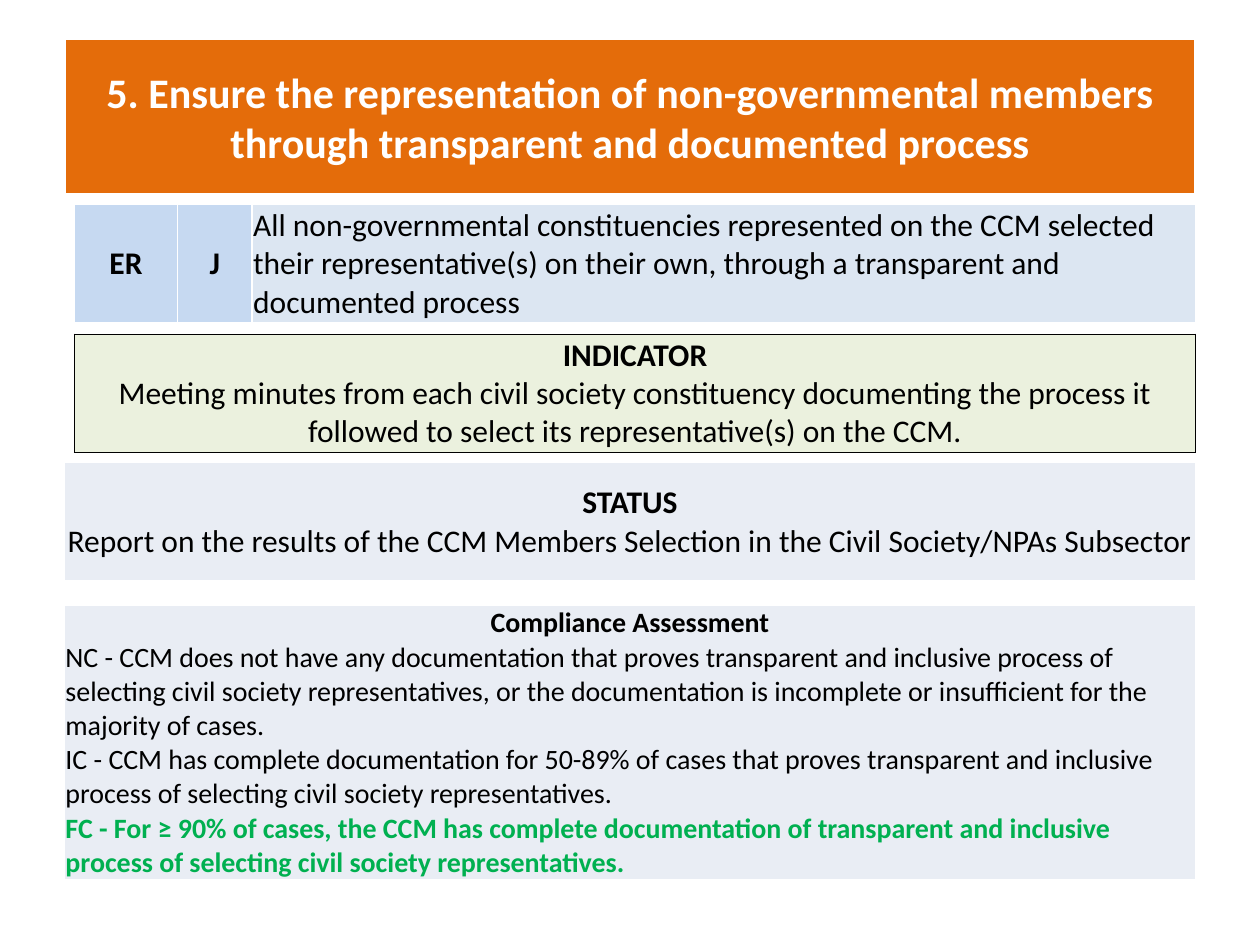
import pptx
import pptx.util
from lxml import etree
from pptx.dml.color import RGBColor
from pptx.enum.shapes import MSO_SHAPE
from pptx.enum.text import MSO_ANCHOR, PP_ALIGN
from pptx.oxml.ns import qn

FONT = "Calibri"
BLACK, WHITE, GREEN = "000000", "FFFFFF", "00B050"
ORANGE, BLUE, PALE_BLUE, OLIVE, GREY = "E46C0A", "C6D9F1", "DCE6F2", "EBF1DE", "E9EDF4"
CENTER, LEFT = PP_ALIGN.CENTER, PP_ALIGN.LEFT

TITLE = ("5. Ensure the representation of non-governmental members "
         "through transparent and documented process")

# Paragraph: text, bold, alignment, colour
REQUIREMENT = [
    (BLUE, [("ER", True, CENTER, BLACK)]),
    (BLUE, [("J", True, CENTER, BLACK)]),
    (PALE_BLUE, [("All non-governmental constituencies represented on the CCM selected their "
                  "representative(s) on their own, through a transparent and documented process",
                  False, LEFT, BLACK)]),
]
INDICATOR = [(OLIVE, [
    ("INDICATOR", True, CENTER, BLACK),
    ("Meeting minutes from each civil society constituency documenting the process it "
     "followed to select its representative(s) on the CCM.", False, CENTER, BLACK),
])]
STATUS = [(GREY, [
    ("STATUS", True, CENTER, BLACK),
    ("Report on the results of the CCM Members Selection in the Civil Society/NPAs Subsector",
     False, CENTER, BLACK),
])]
COMPLIANCE = [(GREY, [
    ("Compliance Assessment", True, CENTER, BLACK),
    ("NC - CCM does not have any documentation that proves transparent and inclusive process of "
     "selecting civil society representatives, or the documentation is incomplete or "
     "insufficient for the majority of cases.", False, LEFT, BLACK),
    ("IC - CCM has complete documentation for 50-89% of cases that proves transparent and "
     "inclusive process of selecting civil society representatives.", False, LEFT, BLACK),
    ("FC - For ≥ 90% of cases, the CCM has complete documentation of transparent and inclusive "
     "process of selecting civil society representatives.", True, LEFT, GREEN),
])]

WIDTH, HEIGHT = 10, 7.5
MARGIN, INDENT = 0.51, 0.08
FULL = WIDTH - 2 * MARGIN
ROW = 0.94
# Cells, left, top, column widths, height, text size, border colour, border width
BANDS = [
    (REQUIREMENT, MARGIN + INDENT, 1.62, [0.82, 0.59, FULL - INDENT - 1.41], ROW, 18, WHITE, 1),
    (INDICATOR, MARGIN + INDENT, 2.65, [FULL - INDENT], ROW, 18, BLACK, 0.5),
    (STATUS, MARGIN, 3.67, [FULL], ROW, 18, WHITE, 1),
    (COMPLIANCE, MARGIN, 4.8, [FULL], 2.18, 16, WHITE, 1),
]

inches = pptx.util.Inches


def rgb(value):
    return RGBColor.from_string(value)


def write(tf, paragraphs, size):
    for i, (text, bold, align, color) in enumerate(paragraphs):
        p = tf.add_paragraph() if i else tf.paragraphs[0]
        p.text, p.alignment = text, align
        font = p.runs[0].font
        font.name, font.size, font.bold = FONT, pptx.util.Pt(size), bold
        font.color.rgb = rgb(color)


def set_borders(cell, color, width):
    tc_pr = cell._tc.get_or_add_tcPr()
    for i, side in enumerate(("lnL", "lnR", "lnT", "lnB")):
        ln = etree.Element(qn("a:" + side), w=str(pptx.util.Pt(width)))
        fill = etree.SubElement(ln, qn("a:solidFill"))
        etree.SubElement(fill, qn("a:srgbClr"), val=color)
        tc_pr.insert(i, ln)


def add_title(s):
    box = s.shapes.add_shape(MSO_SHAPE.RECTANGLE, inches(MARGIN), inches(0.3),
                             inches(FULL), inches(1.25))
    box.shadow.inherit = False
    box.fill.solid()
    box.fill.fore_color.rgb = rgb(ORANGE)
    box.line.color.rgb = rgb(WHITE)
    box.line.width = pptx.util.Pt(2)
    box.text_frame.word_wrap = True
    box.text_frame.vertical_anchor = MSO_ANCHOR.MIDDLE
    write(box.text_frame, [(TITLE, True, CENTER, WHITE)], 24)


def add_band(s, cells, left, top, widths, height, size, border, border_width):
    table = s.shapes.add_table(1, len(cells), inches(left), inches(top),
                               inches(sum(widths)), inches(height)).table
    table.first_row = table.horz_banding = False
    for i, (fill, paragraphs) in enumerate(cells):
        table.columns[i].width = inches(widths[i])
        cell = table.cell(0, i)
        cell.fill.solid()
        cell.fill.fore_color.rgb = rgb(fill)
        cell.vertical_anchor = MSO_ANCHOR.MIDDLE
        cell.margin_left = cell.margin_right = cell.margin_top = inches(0.01)
        cell.margin_bottom = 0
        write(cell.text_frame, paragraphs, size)
        set_borders(cell, border, border_width)


def main():
    prs = pptx.Presentation()
    prs.slide_width, prs.slide_height = inches(WIDTH), inches(HEIGHT)
    s = prs.slides.add_slide(prs.slide_layouts[6])
    add_title(s)
    for band in BANDS:
        add_band(s, *band)
    prs.save("out.pptx")


if __name__ == "__main__":
    main()
